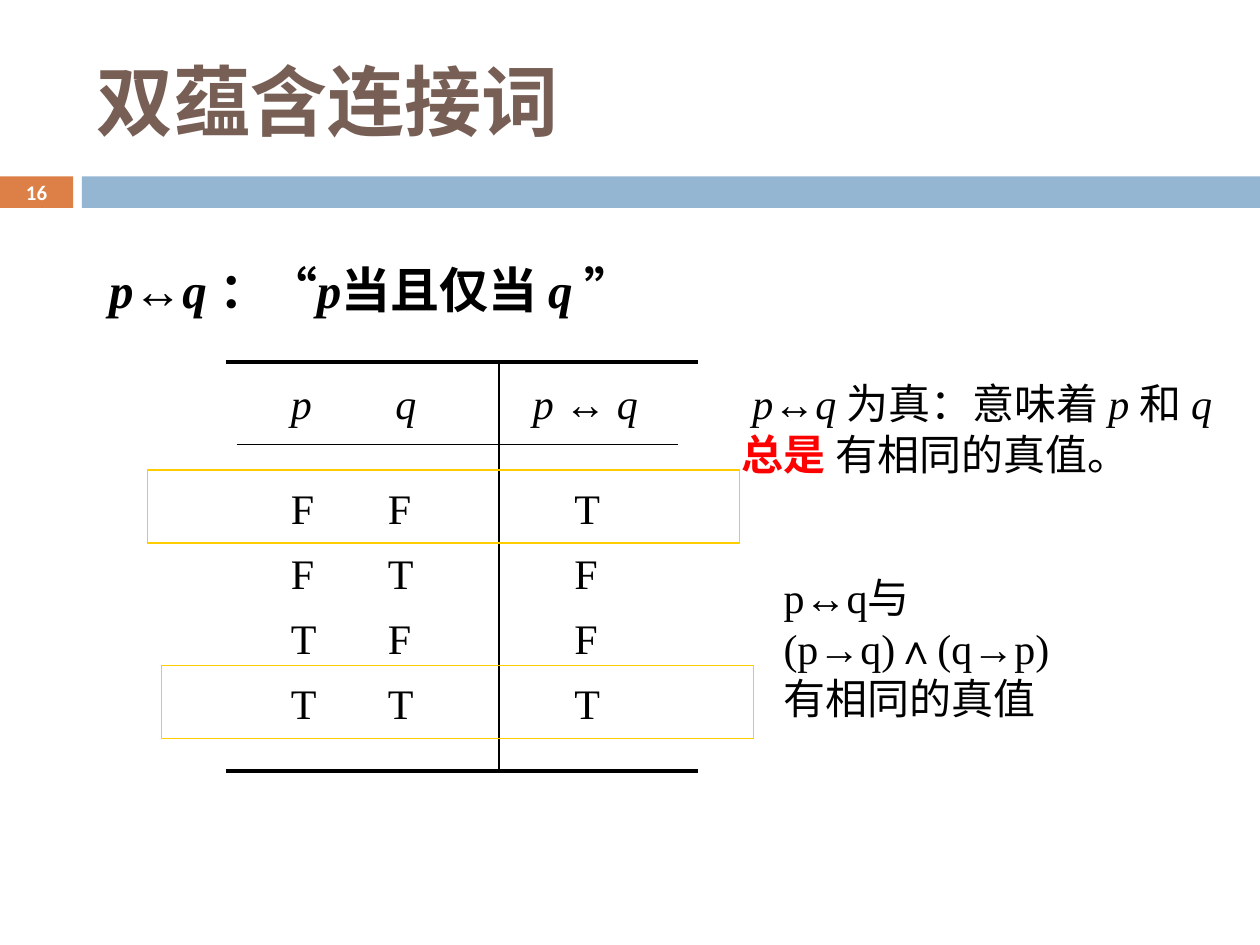
from lxml.etree import SubElement
from pptx import Presentation
from pptx.dml.color import RGBColor
from pptx.enum.lang import MSO_LANGUAGE_ID
from pptx.enum.shapes import MSO_CONNECTOR, MSO_SHAPE
from pptx.enum.text import MSO_ANCHOR, PP_ALIGN
from pptx.oxml.ns import qn
from pptx.util import Inches, Pt

INK = {"orange": "DD8047", "blue": "94B6D2", "brown": "775F55", "white": "FFFFFF",
       "black": "000000", "red": "FF0000", "gold": "FFCC00"}
SERIF = "Times New Roman"


def add_rect(left, top, width, height):
    rect = slide.shapes.add_shape(MSO_SHAPE.RECTANGLE, Inches(left), Inches(top),
                                  Inches(width), Inches(height))
    rect.shadow.inherit = False
    return rect


def add_text(area, paras, size=24, face=SERIF, ink="black", gap=0, tab=None, wrap=True):
    box = slide.shapes.add_textbox(*[Inches(n) for n in area])
    frame = box.text_frame
    frame.word_wrap = wrap
    for i, runs in enumerate(paras):
        para = frame.paragraphs[0] if i == 0 else frame.add_paragraph()
        if tab:
            tabs = SubElement(para._p.get_or_add_pPr(), qn("a:tabLst"))
            SubElement(tabs, qn("a:tab"), pos=str(Inches(tab)), algn="l")
        if i and gap:
            para.space_before = Pt(gap)
        for words, style in runs:
            run = para.add_run()
            run.text = words
            font = run.font
            font.size, font.name = Pt(size), face
            font.bold, font.italic = "b" in style, "i" in style
            font.language_id = MSO_LANGUAGE_ID.SIMPLIFIED_CHINESE
            font.color.rgb = RGBColor.from_string(INK["red" if "r" in style else ink])
    return frame


deck = Presentation()
deck.slide_width, deck.slide_height = Inches(10), Inches(7.5)
slide = deck.slides.add_slide(deck.slide_layouts[6])

for left, width, ink in [(0, 0.58, "orange"), (0.65, 9.35, "blue")]:
    band = add_rect(left, 1.4, width, 0.25)
    band.fill.solid()
    band.fill.fore_color.rgb = RGBColor.from_string(INK[ink])
    band.line.fill.background()

title = add_text((0.67, 0.25, 8.92, 1.08), [[("双蕴含连接词", "b")]], 44, "Calibri", "brown")
title.vertical_anchor = MSO_ANCHOR.MIDDLE
page = add_text((0, 1.39, 0.58, 0.27), [[("16", "b")]], 11.9, "Calibri", "white")
page.vertical_anchor = MSO_ANCHOR.MIDDLE
page.paragraphs[0].alignment = PP_ALIGN.CENTER

add_text((5.79, 2.95, 4.04, 0.91), [[
    (" ", ""), ("p", "i"), ("↔", ""), ("q ", "i"), ("为真：意味着 ", ""), ("p ", "i"),
    ("和 ", ""), ("q ", "i"), ("总是", "br"), (" 有相同的真值。", "")]])

for x1, y1, x2, y2, width in [
    (1.79, 2.87, 5.54, 2.87, 2.25),
    (1.79, 6.12, 5.54, 6.12, 2.25),
    (1.88, 3.53, 5.38, 3.53, 0.75),
    (3.96, 2.87, 3.96, 6.12, 0.75),
]:
    rule = slide.shapes.add_connector(MSO_CONNECTOR.STRAIGHT, Inches(x1), Inches(y1),
                                      Inches(x2), Inches(y2))
    rule.line.color.rgb = RGBColor.from_string(INK["black"])
    rule.line.width = Pt(width)
    SubElement(rule._element.spPr, qn("a:effectLst"))

truth = [("F", "F", "T"), ("F", "T", "F"), ("T", "F", "F"), ("T", "T", "T")]
add_text((2.21, 2.95, 1.67, 0.5), [[("p\tq", "i")]], tab=0.83)
add_text((2.21, 3.78, 1.58, 2.56), [[(f"{p}\t{q}", "")] for p, q, both in truth],
         gap=8.4, tab=0.77)
add_text((4.13, 2.95, 1.25, 0.5), [[("p ", "i"), ("↔ ", ""), ("q", "i")]])
add_text((4.46, 3.78, 0.67, 2.56), [[(both, "")] for p, q, both in truth], gap=8.4)

add_text((6.12, 4.49, 3.38, 1.21),
         [[("p↔q与", "")], [("(p→q)∧(q→p)", "")], [("有相同的真值", "")]], wrap=False)
add_text((0.67, 2.01, 8.5, 0.57), [[
    (" ", "b"), ("p", "bi"), ("↔", "b"), ("q ", "bi"), ("：“", "b"), ("p", "bi"),
    ("当且仅当 ", "b"), ("q ", "bi"), ("”", "b")]], 28)

for left, top in [(1.28, 5.28), (1.17, 3.73)]:
    frame = add_rect(left, top, 4.7, 0.58)
    frame.fill.background()
    frame.line.color.rgb = RGBColor.from_string(INK["gold"])
    frame.line.width = Pt(0.75)

deck.save("out.pptx")
